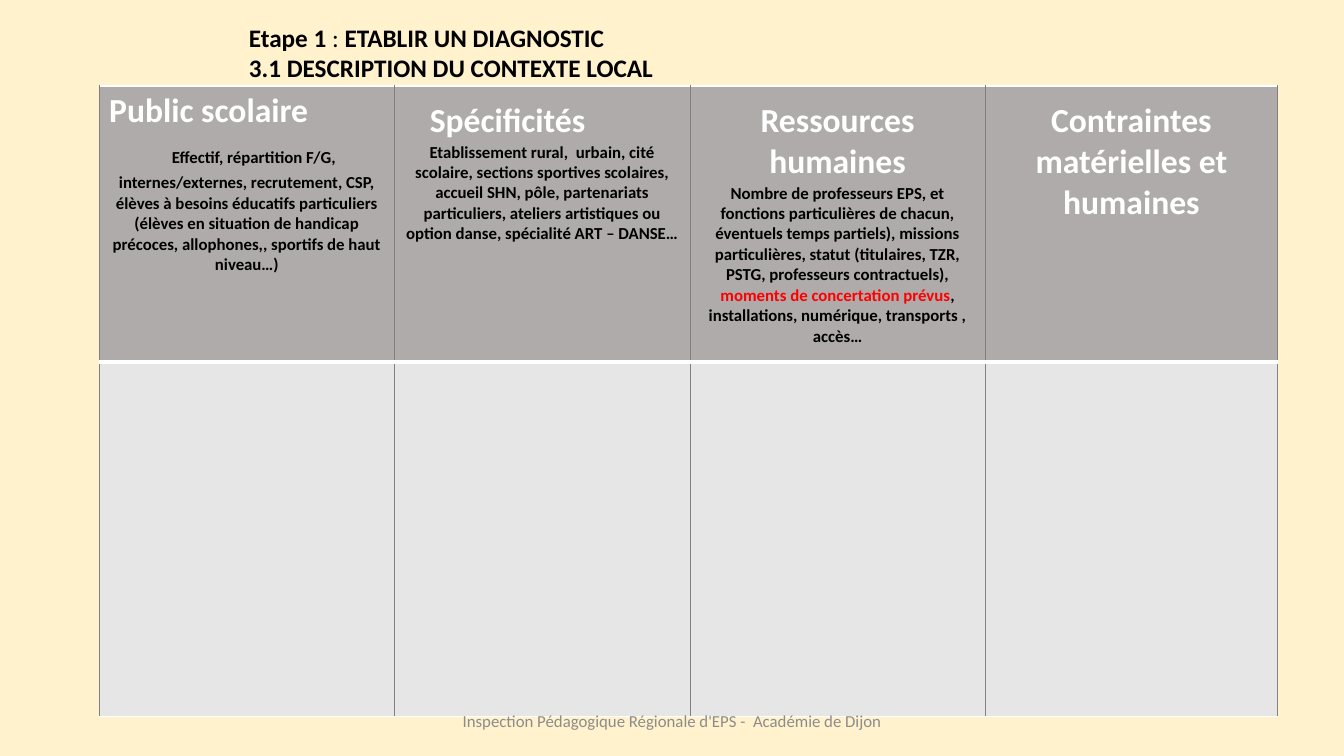
import pptx
import pptx.dml.color
import pptx.enum.text
import pptx.oxml
import pptx.oxml.ns
import pptx.util

Pt = pptx.util.Pt
ALIGN = pptx.enum.text.PP_ALIGN
ANCHOR = pptx.enum.text.MSO_ANCHOR

BLACK, WHITE, RED = "000000", "FFFFFF", "FF0000"
CREAM, GREY, PALE, RULE, FOOTER = "FFF2CC", "AFABAB", "E7E6E6", "808080", "8C8C8C"


def colour(code):
    return pptx.dml.color.RGBColor.from_string(code)


class DiagnosticSlide:
    """Holds the font and the current page, and adds each kind of element."""

    font = "Calibri"

    def __init__(self, page):
        self.page = page
        page.background.fill.solid()
        page.background.fill.fore_color.rgb = colour(CREAM)

    def fill_paragraph(self, para, spans, size, align=ALIGN.CENTER, before=0, indent=0):
        """Fill a paragraph with (text, colour, bold) spans."""
        para.alignment = align
        para.space_before = Pt(before)
        if indent:
            para._p.get_or_add_pPr().set("marL", str(Pt(indent)))
        for text, code, bold in spans:
            span = para.add_run()
            span.text = text
            span.font.name = self.font
            span.font.size = Pt(size)
            span.font.bold = bold
            span.font.color.rgb = colour(code)

    def fill_frame(self, frame, paragraphs):
        """Put (spans, size, options) paragraphs into a text frame."""
        frame.word_wrap = True
        for number, (spans, size, options) in enumerate(paragraphs):
            para = frame.add_paragraph() if number else frame.paragraphs[0]
            self.fill_paragraph(para, spans, size, **options)

    def title(self, left, top, width, height, paragraphs):
        box = self.page.shapes.title
        box.left, box.top, box.width, box.height = map(Pt, (left, top, width, height))
        frame = box.text_frame
        frame.auto_size = pptx.enum.text.MSO_AUTO_SIZE.NONE
        frame.vertical_anchor = ANCHOR.TOP
        self.fill_frame(frame, paragraphs)

    def text(self, left, top, width, height, paragraphs):
        box = self.page.shapes.add_textbox(*map(Pt, (left, top, width, height)))
        box.text_frame.vertical_anchor = ANCHOR.MIDDLE
        self.fill_frame(box.text_frame, paragraphs)

    def style_cell(self, cell, fill, bottom):
        borders = (("lnL", RULE, 0.25), ("lnR", RULE, 0.25),
                   ("lnT", WHITE, 1), ("lnB", WHITE, bottom))
        for tag, code, width in borders:
            cell._tc.get_or_add_tcPr().append(pptx.oxml.parse_xml(
                f'<a:{tag} {pptx.oxml.ns.nsdecls("a")} w="{Pt(width)}">'
                f'<a:solidFill><a:srgbClr val="{code}"/></a:solidFill></a:{tag}>'))
        cell.fill.solid()
        cell.fill.fore_color.rgb = colour(fill)

    def table(self, left, top, widths, heights, headers):
        """Add a header row of (top margin, paragraphs) above an empty row."""
        frame = self.page.shapes.add_table(
            len(heights), len(widths),
            *map(Pt, (left, top, sum(widths), sum(heights))))
        grid = frame.table
        for row, height in zip(grid.rows, heights):
            row.height = Pt(height)
        for index, (width, (margin, paragraphs)) in enumerate(zip(widths, headers)):
            grid.columns[index].width = Pt(width)
            header = grid.cell(0, index)
            self.style_cell(header, GREY, 3)
            self.style_cell(grid.cell(1, index), PALE, 1)
            header.margin_top = Pt(margin)
            header.vertical_anchor = ANCHOR.TOP
            self.fill_frame(header.text_frame, paragraphs)


def heading(text, **options):
    return [(text, WHITE, True)], 24, options


def detail(text, **options):
    return [(text, BLACK, True)], 12, options


HEADERS = [
    (3.6, [
        heading("Public scolaire", align=ALIGN.LEFT),
        detail("Effectif, répartition F/G,", before=11, indent=10),
        detail("internes/externes, recrutement, CSP, élèves à besoins éducatifs "
               "particuliers (élèves en situation de handicap précoces, "
               "allophones,, sportifs de haut niveau…)", before=3.6),
    ]),
    (10.8, [
        heading("Spécificités", align=ALIGN.LEFT, indent=18),
        detail("Etablissement rural,  urbain, cité scolaire, sections sportives "
               "scolaires, accueil SHN, pôle, partenariats particuliers, ateliers "
               "artistiques ou option danse, spécialité ART – DANSE…"),
    ]),
    (10.8, [
        heading("Ressources humaines"),
        ([("Nombre de professeurs EPS, et fonctions particulières de chacun, "
           "éventuels temps partiels), missions particulières, statut "
           "(titulaires, TZR, PSTG, professeurs contractuels), ", BLACK, True),
          ("moments de concertation prévus", RED, True),
          (",", BLACK, True)], 12, {}),
        detail("installations, numérique, transports , accès…"),
    ]),
    (10.8, [heading("Contraintes matérielles et humaines")]),
]


def main():
    deck = pptx.Presentation()
    deck.slide_width, deck.slide_height = Pt(960), Pt(540)
    slide = DiagnosticSlide(deck.slides.add_slide(deck.slide_layouts[5]))
    left = {"align": ALIGN.LEFT}
    slide.title(170.6, 12.2, 741.6, 72.7, [
        ([("Etape 1 ", BLACK, True), (": ", BLACK, False),
          ("ETABLIR UN DIAGNOSTIC", BLACK, True)], 18, left),
        ([("3.1 DESCRIPTION DU CONTEXTE LOCAL", BLACK, True)], 18, left),
    ])
    slide.table(70.8, 61.4, [211, 211, 211, 208.8], [197, 253.4], HEADERS)
    slide.text(318.2, 500.4, 324, 28.8, [
        ([("Inspection Pédagogique Régionale d'EPS -  Académie de Dijon",
           FOOTER, False)], 12, {}),
    ])
    deck.save("out.pptx")


if __name__ == "__main__":
    main()
